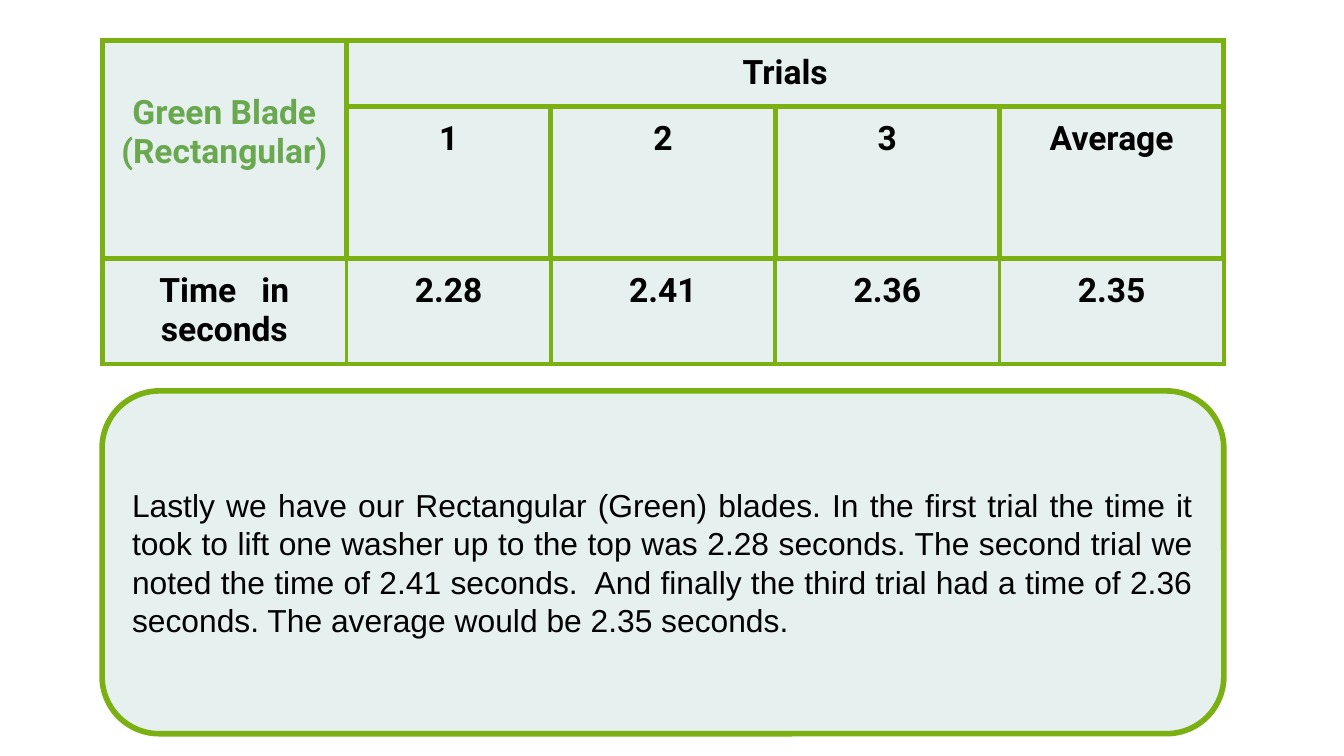
import pptx
import pptx.dml.color
import pptx.enum.shapes
import pptx.enum.text
import pptx.oxml
import pptx.oxml.ns
import pptx.util
from pptx.util import Cm

GREEN, PALE, LEAF, BLACK = "7AB012", "E6F0EF", "6AA84F", "000000"
LEFT = Cm(1.93)
COLS = [4.62, 3.86, 4.24, 4.24, 4.24]
ROWS = [1.25, 2.87, 2.0]
THICK, THIN = 3, 2.25
ALIGN = pptx.enum.text.PP_ALIGN
CELLS = [
    ["Green Blade\n(Rectangular)", "Trials", "", "", ""],
    ["", "1", "2", "3", "Average"],
    ["Time   in seconds", "2.28", "2.41", "2.36", "2.35"],
]
SUMMARY = (
    "Lastly we have our Rectangular (Green) blades. In the first trial the time it "
    "took to lift one washer up to the top was 2.28 seconds. The second trial we "
    "noted the time of 2.41 seconds.  And finally the third trial had a time of 2.36 "
    "seconds. The average would be 2.35 seconds."
)


def rgb(value):
    """Return the colour for a hex string."""
    return pptx.dml.color.RGBColor.from_string(value)


def fill(target, color):
    """Fill a shape or cell with a solid colour."""
    target.fill.solid()
    target.fill.fore_color.rgb = rgb(color)


def set_margins(target, size=0.25):
    """Give a cell or text frame equal inner margins."""
    for side in ("left", "top", "right", "bottom"):
        setattr(target, f"margin_{side}", Cm(size))


def write(tf, text, size, font, color=BLACK, bold=False, align=ALIGN.CENTER):
    """Write each line of text as a paragraph with one run."""
    for i, line in enumerate(text.split("\n")):
        p = tf.add_paragraph() if i else tf.paragraphs[0]
        p.alignment = align
        r = p.add_run()
        r.text = line
        r.font.size = pptx.util.Pt(size)
        r.font.name = font
        r.font.bold = bold
        r.font.color.rgb = rgb(color)


def set_borders(cell, widths):
    """Draw the left, right, top and bottom borders at widths in points."""
    tcPr = cell._tc.get_or_add_tcPr()
    for i, (side, width) in enumerate(zip("LRTB", widths)):
        tcPr.insert(i, pptx.oxml.parse_xml(
            f'<a:ln{side} {pptx.oxml.ns.nsdecls("a")} w="{pptx.util.Pt(width)}">'
            f'<a:solidFill><a:srgbClr val="{GREEN}"/></a:solidFill></a:ln{side}>'))


def border_widths(row, col):
    """Return the four border widths for a table position."""
    if row < 2:
        return [THICK] * 4
    return [THIN] * 4 if col else [THICK, THIN, THICK, THICK]


def add_trials_table(s):
    """Add the table of lifting times."""
    table = s.shapes.add_table(len(ROWS), len(COLS), LEFT, Cm(0.76),
                               Cm(sum(COLS)), Cm(sum(ROWS))).table
    table.first_row = table.horz_banding = False
    for column, width in zip(table.columns, COLS):
        column.width = Cm(width)
    for row, height in zip(table.rows, ROWS):
        row.height = Cm(height)
    table.cell(0, 0).merge(table.cell(1, 0))
    table.cell(0, 1).merge(table.cell(0, 4))
    for i, texts in enumerate(CELLS):
        for j, text in enumerate(texts):
            cell = table.cell(i, j)
            fill(cell, PALE)
            set_borders(cell, border_widths(i, j))
            set_margins(cell)
            if text:
                color = LEAF if i == j == 0 else BLACK
                write(cell.text_frame, text, 18, "Roboto", color, bold=True)
    table.cell(0, 0).margin_top = Cm(1)


def add_summary(s):
    """Add the rounded panel that describes the trials."""
    sp = s.shapes.add_shape(pptx.enum.shapes.MSO_SHAPE.ROUNDED_RECTANGLE,
                            LEFT, Cm(7.39), Cm(sum(COLS)), Cm(6.48))
    sp.shadow.inherit = False
    fill(sp, PALE)
    sp.line.color.rgb = rgb(GREEN)
    sp.line.width = pptx.util.Pt(THICK)
    tf = sp.text_frame
    tf.word_wrap = True
    tf.vertical_anchor = pptx.enum.text.MSO_ANCHOR.MIDDLE
    set_margins(tf)
    write(tf, SUMMARY, 17, "Arial", align=ALIGN.JUSTIFY)


def main():
    """Build and save the slide."""
    prs = pptx.Presentation()
    prs.slide_width, prs.slide_height = Cm(25.4), Cm(14.29)
    s = prs.slides.add_slide(prs.slide_layouts[6])
    add_trials_table(s)
    add_summary(s)
    prs.save("out.pptx")


if __name__ == "__main__":
    main()
